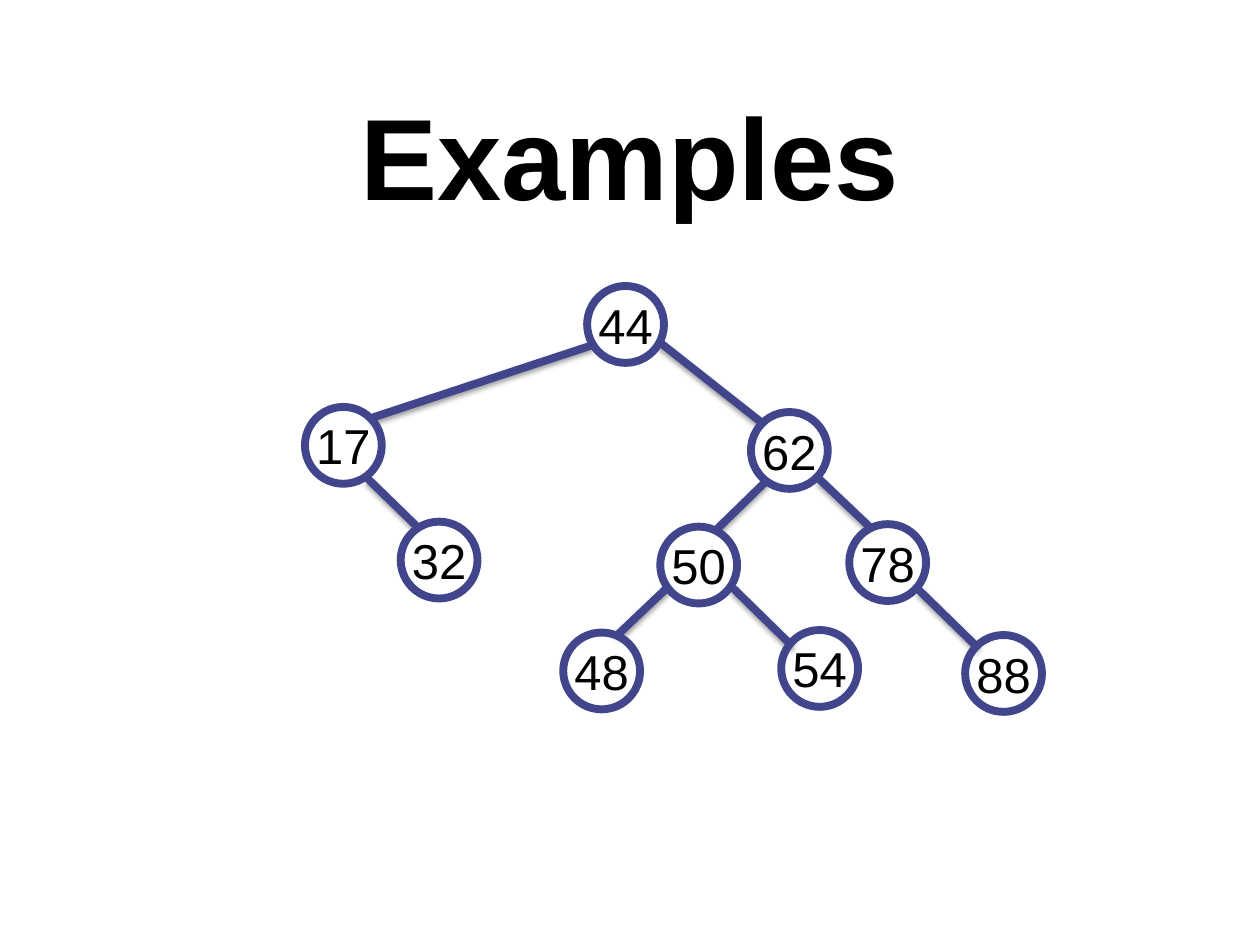
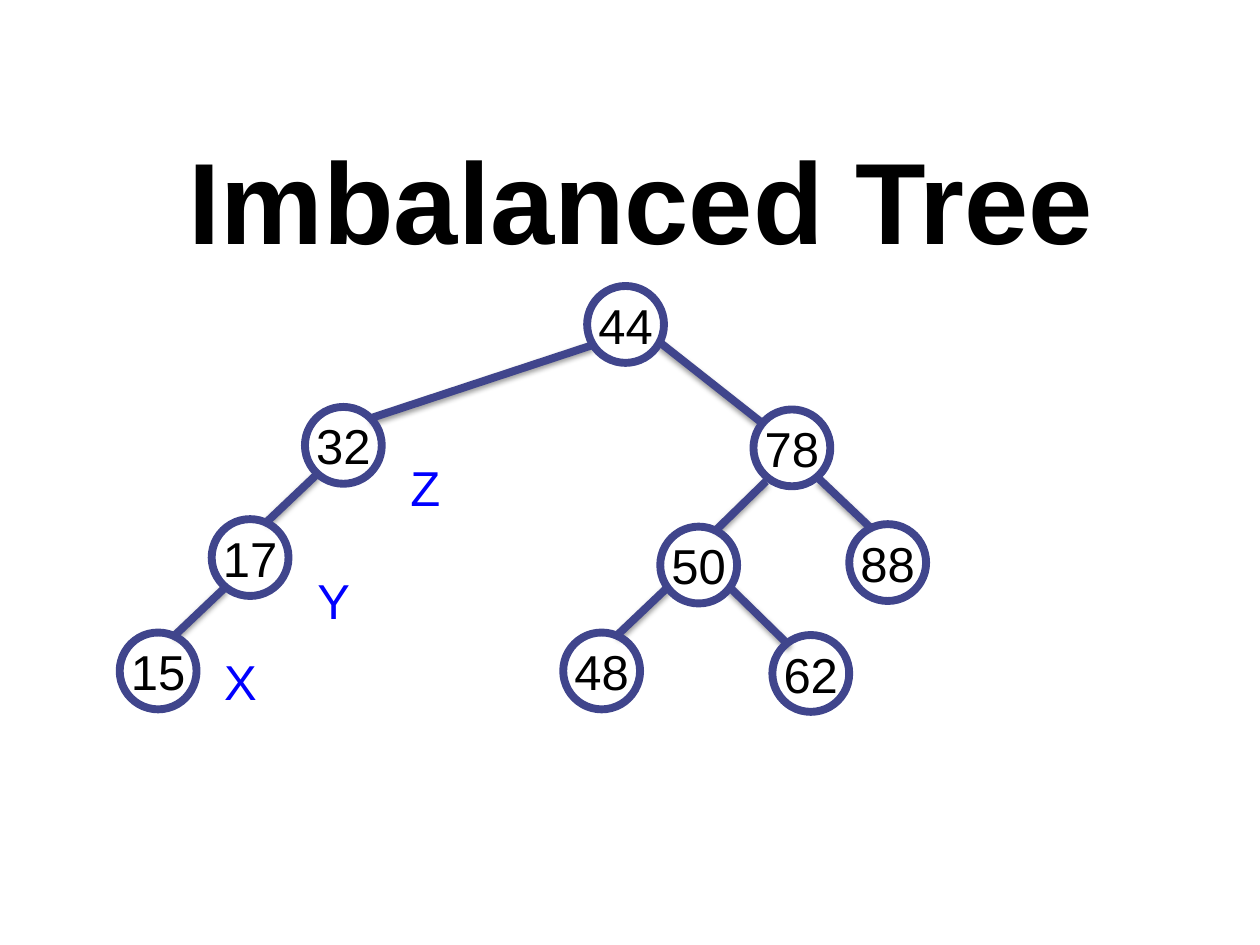
"""Build two slides that show binary search trees."""
from dataclasses import dataclass

from lxml import etree
from pptx import Presentation
from pptx.dml.color import RGBColor
from pptx.enum.shapes import MSO_CONNECTOR, MSO_SHAPE
from pptx.enum.text import MSO_ANCHOR, MSO_AUTO_SIZE, PP_ALIGN
from pptx.oxml.ns import qn
from pptx.shapes.base import BaseShape
from pptx.slide import Slide
from pptx.util import Inches, Pt

STRAIGHT = MSO_CONNECTOR.STRAIGHT
OVAL = MSO_SHAPE.OVAL
MIDDLE, TOP = MSO_ANCHOR.MIDDLE, MSO_ANCHOR.TOP
GROW = MSO_AUTO_SIZE.SHAPE_TO_FIT_TEXT
CENTER, LEFT = PP_ALIGN.CENTER, PP_ALIGN.LEFT

SLIDE_WIDTH, SLIDE_HEIGHT = Inches(10), Inches(7.5)
COLUMNS, ROWS = 100, 75
NODE_SPAN = 6.1
TITLE_COLUMNS, TITLE_ROWS = 90, 12.5
LABEL_COLUMNS, LABEL_ROWS = 4.4, 5.7


@dataclass(frozen=True)
class Theme:
    """Colours, type sizes and line weights of the deck."""
    font: str = "Arial"
    ink: RGBColor = RGBColor(0x00, 0x00, 0x00)
    tree: RGBColor = RGBColor(0x40, 0x45, 0x8C)
    label: RGBColor = RGBColor(0x00, 0x00, 0xFF)
    title_size: Pt = Pt(66)
    text_size: Pt = Pt(28)
    stroke: Pt = Pt(4.5)
    shadow_blur: Pt = Pt(3.1)
    shadow_distance: Pt = Pt(1.6)
    shadow_opacity: int = 38


@dataclass(frozen=True)
class Mark:
    """Text placed at a column and row of the grid."""
    text: str
    column: float
    row: float


@dataclass(frozen=True)
class Edge:
    """Line from a parent node to a child node."""
    start: tuple[float, float]
    end: tuple[float, float]


@dataclass(frozen=True)
class TreePage:
    """Title, nodes, edges and labels of one slide."""
    title: Mark
    nodes: tuple[Mark, ...]
    edges: tuple[Edge, ...]
    labels: tuple[Mark, ...] = ()


THEME = Theme()

SHARED_NODES = (Mark("44", 46.6, 22.7), Mark("50", 52.4, 41.8), Mark("48", 44.7, 50.2))
SHARED_EDGES = (
    Edge((47, 27.4), (29.4, 33.2)),
    Edge((52.4, 27.2), (60.4, 33.5)),
    Edge((60.8, 38.2), (56.9, 42)),
    Edge((65, 38), (69, 41.8)),
    Edge((53, 46.6), (49, 50.4)),
)

PAGES = (
    TreePage(
        title=Mark("Examples", 5, 6),
        nodes=SHARED_NODES + (
            Mark("17", 24.2, 32.3), Mark("32", 31.8, 41.4), Mark("62", 59.6, 32.7),
            Mark("78", 67.4, 41.6), Mark("54", 62, 50), Mark("88", 76.6, 50.4),
        ),
        edges=SHARED_EDGES + (
            Edge((29.2, 38), (33.1, 41.8)),
            Edge((72.9, 46.8), (77.6, 51.4)),
            Edge((58.2, 46.7), (62.9, 51.3)),
        ),
    ),
    TreePage(
        title=Mark("Imbalanced Tree", 5.9, 9.5),
        nodes=SHARED_NODES + (
            Mark("32", 24.2, 32.3), Mark("17", 16.8, 41.2), Mark("15", 9.5, 50.2),
            Mark("78", 59.8, 32.5), Mark("88", 67.4, 41.6), Mark("62", 61.3, 50.4),
        ),
        edges=SHARED_EDGES + (
            Edge((25.2, 37.6), (21.2, 41.4)),
            Edge((17.9, 46.6), (13.9, 50.4)),
            Edge((57.9, 46.6), (62.6, 51.2)),
        ),
        labels=(Mark("X", 16.8, 51.2), Mark("Y", 24.2, 44.8), Mark("Z", 31.6, 35.8)),
    ),
)


def across(columns: float) -> int:
    """Turn grid columns into a length."""
    return round(SLIDE_WIDTH * columns / COLUMNS)


def down(rows: float) -> int:
    """Turn grid rows into a length."""
    return round(SLIDE_HEIGHT * rows / ROWS)


def write(box: BaseShape, text: str, size: Pt, color: RGBColor, align: PP_ALIGN,
          anchor: MSO_ANCHOR, wrap: bool = False, bold: bool = False) -> None:
    """Put one styled paragraph into a box."""
    frame = box.text_frame
    frame.word_wrap = wrap
    frame.vertical_anchor = anchor
    para = frame.paragraphs[0]
    para.text = text
    para.alignment = align
    para.font.name = THEME.font
    para.font.size = size
    para.font.bold = bold
    para.font.color.rgb = color


def add_title(page: Slide, title: Mark) -> None:
    """Draw the slide title."""
    box = page.shapes.add_textbox(across(title.column), down(title.row),
                                  across(TITLE_COLUMNS), down(TITLE_ROWS))
    write(box, title.text, THEME.title_size, THEME.ink, CENTER, MIDDLE, wrap=True, bold=True)


def add_edge(page: Slide, edge: Edge) -> None:
    """Draw a tree edge with a soft shadow below it."""
    (start_column, start_row), (end_column, end_row) = edge.start, edge.end
    line = page.shapes.add_connector(STRAIGHT, across(start_column), down(start_row),
                                     across(end_column), down(end_row))
    line.line.color.rgb = THEME.tree
    line.line.width = THEME.stroke
    effects = etree.SubElement(line._element.spPr, qn("a:effectLst"))
    shadow = etree.SubElement(effects, qn("a:outerShdw"), blurRad=str(THEME.shadow_blur),
                              dist=str(THEME.shadow_distance), dir=str(90 * 60000),
                              rotWithShape="0")
    color = etree.SubElement(shadow, qn("a:srgbClr"), val=str(THEME.ink))
    etree.SubElement(color, qn("a:alpha"), val=str(THEME.shadow_opacity * 1000))


def add_node(page: Slide, node: Mark) -> None:
    """Draw a tree node as a ring around its key."""
    ring = page.shapes.add_shape(OVAL, across(node.column), down(node.row),
                                 across(NODE_SPAN), down(NODE_SPAN))
    ring.shadow.inherit = False
    ring.fill.background()
    ring.line.color.rgb = THEME.tree
    ring.line.width = THEME.stroke
    write(ring, node.text, THEME.text_size, THEME.ink, CENTER, MIDDLE)


def add_label(page: Slide, label: Mark) -> None:
    """Draw the letter that names a node."""
    box = page.shapes.add_textbox(across(label.column), down(label.row),
                                  across(LABEL_COLUMNS), down(LABEL_ROWS))
    write(box, label.text, THEME.text_size, THEME.label, LEFT, TOP)
    box.text_frame.auto_size = GROW


def main() -> None:
    """Build the deck and save it."""
    deck = Presentation()
    deck.slide_width, deck.slide_height = SLIDE_WIDTH, SLIDE_HEIGHT
    blank = deck.slide_layouts[6]
    for tree in PAGES:
        page = deck.slides.add_slide(blank)
        add_title(page, tree.title)
        for edge in tree.edges:
            add_edge(page, edge)
        for node in tree.nodes:
            add_node(page, node)
        for label in tree.labels:
            add_label(page, label)
    deck.save("out.pptx")


if __name__ == "__main__":
    main()
